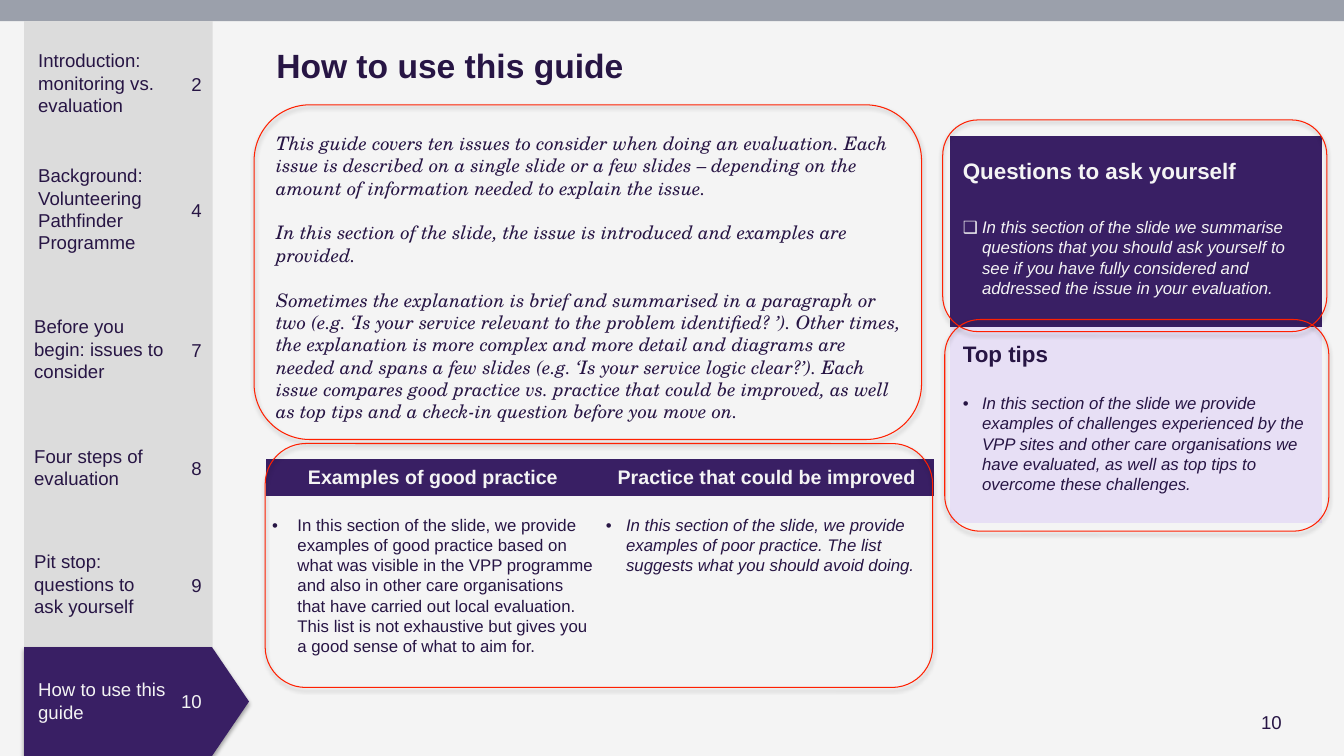
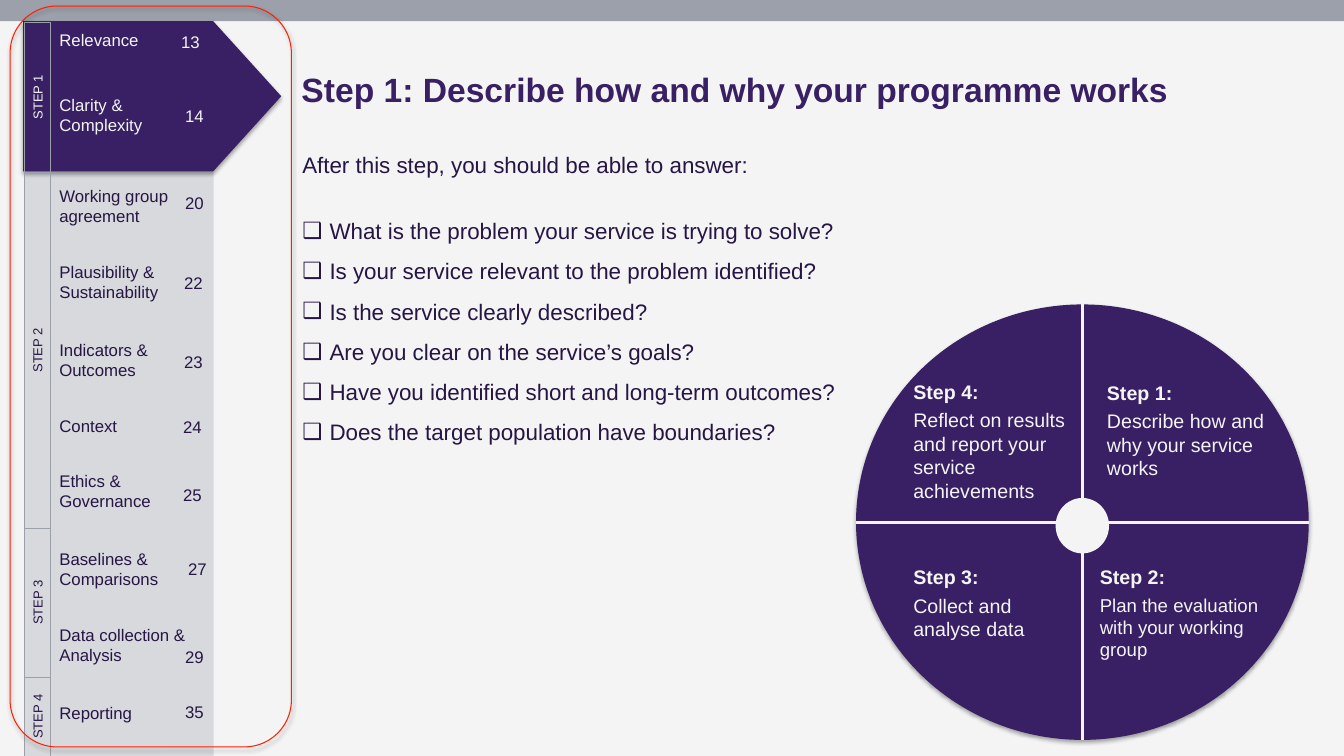
from lxml import etree
from pptx import Presentation
from pptx.dml.color import RGBColor
from pptx.enum.shapes import MSO_CONNECTOR, MSO_SHAPE
from pptx.enum.text import MSO_ANCHOR, MSO_AUTO_SIZE, PP_ALIGN
from pptx.oxml.ns import qn
from pptx.util import Inches, Pt

RECTANGLE = MSO_SHAPE.RECTANGLE
ROUNDED = MSO_SHAPE.ROUNDED_RECTANGLE
PENTAGON = MSO_SHAPE.PENTAGON
OVAL = MSO_SHAPE.OVAL
STRAIGHT = MSO_CONNECTOR.STRAIGHT
TOP, MIDDLE = MSO_ANCHOR.TOP, MSO_ANCHOR.MIDDLE
LEFT, CENTER, RIGHT = PP_ALIGN.LEFT, PP_ALIGN.CENTER, PP_ALIGN.RIGHT

COLORS = {
    "paper": "F4F4F4",
    "band": "9BA0AB",
    "ink": "271544",
    "purple": "391F64",
    "lilac": "E7DFF5",
    "guide_bar": "DCDCDC",
    "step_bar": "D7D9DD",
    "frame": "FF2001",
}
SANS, SERIF = "Arial", "TeX Gyre Schola"
CHECKBOX, DOT = "❑", "•"
TITLE_ONLY = 5
PLAIN_TABLE_STYLE = "{2D5ABB26-0587-4C30-8999-92F81FD0307C}"
LABEL_WIDTH, PAGE_WIDTH = 1.49, 0.5

# label, page, left, top, height
GUIDE_ENTRIES = [
    ("Introduction: monitoring vs. evaluation", "2", 0.28, 0.44, 0.77),
    ("Background: Volunteering Pathfinder Programme", "4", 0.28, 1.58, 1),
    ("Before you begin: issues to consider", "7", 0.24, 3.08, 0.77),
    ("Four steps of evaluation", "8", 0.24, 4.36, 0.55),
    ("Pit stop: questions to ask yourself", "9", 0.24, 5.41, 0.77),
    ("How to use this guide", "10", 0.28, 6.68, 0.55),
]
# label, page, top, height, top of page number, right edge of page number
STEP_ENTRIES = [
    ("Relevance", "13", 0.25, 0.3, 0.27, 2.08),
    ("Clarity & Complexity", "14", 0.89, 0.5, 1, 2.12),
    ("Working group agreement", "20", 1.79, 0.5, 1.86, 2.12),
    ("Plausibility & Sustainability", "22", 2.55, 0.5, 2.66, 2.11),
    ("Indicators & Outcomes", "23", 3.32, 0.5, 3.44, 2.11),
    ("Context", "24", 4.08, 0.3, 4.09, 2.1),
    ("Ethics & Governance", "25", 4.62, 0.5, 4.76, 2.1),
    ("Baselines & Comparisons", "27", 5.39, 0.5, 5.49, 2.15),
    ("Data collection & Analysis", "29", 6.15, 0.5, 6.37, 2.12),
    ("Reporting", "35", 6.92, 0.3, 6.91, 2.12),
]
STEP_EDGES = [0.22, 1.71, 5.24, 6.72, 7.5]
# heading, description, left, top, width, description size
WHEEL_STEPS = [
    ("Step 1:", "Describe how and why your service works", 10.88, 3.73, 1.82, 14),
    ("Step 2:", "Plan the evaluation with your working group", 10.81, 5.56, 2.04, 13.3),
    ("Step 3:", "Collect and analyse data", 8.96, 5.56, 1.47, 14),
    ("Step 4:", "Reflect on results and report your service achievements",
     8.96, 3.72, 1.82, 14),
]
INTRODUCTION = [
    "This guide covers ten issues to consider when doing an evaluation. Each issue is "
    "described on a single slide or a few slides – depending on the amount of information "
    "needed to explain the issue.",
    "In this section of the slide, the issue is introduced and examples are provided.",
    "Sometimes the explanation is brief and summarised in a paragraph or two (e.g. ‘Is your "
    "service relevant to the problem identified? ’). Other times, the explanation is more "
    "complex and more detail and diagrams are needed and spans a few slides (e.g. ‘Is your "
    "service logic clear?’). Each issue compares good practice vs. practice that could be "
    "improved, as well as top tips and a check-in question before you move on.",
]
GOOD_PRACTICE = (
    "In this section of the slide, we provide examples of good practice based on what was "
    "visible in the VPP programme and also in other care organisations that have carried out "
    "local evaluation. This list is not exhaustive but gives you a good sense of what to aim for."
)
POOR_PRACTICE = (
    "In this section of the slide, we provide examples of poor practice. The list suggests "
    "what you should avoid doing."
)
QUESTIONS = (
    "In this section of the slide we summarise questions that you should ask yourself to see "
    "if you have fully considered and addressed the issue in your evaluation."
)
TIPS = (
    "In this section of the slide we provide examples of challenges experienced by the VPP "
    "sites and other care organisations we have evaluated, as well as top tips to overcome "
    "these challenges."
)
STEP_QUESTIONS = [
    "What is the problem your service is trying to solve?",
    "Is your service relevant to the problem identified?",
    "Is the service clearly described?",
    "Are you clear on the service’s goals?",
    "Have you identified short and long-term outcomes?",
    "Does the target population have boundaries?",
]


def rgb(name):
    return RGBColor.from_string(COLORS[name])


def box(left, top, width, height):
    return [Inches(value) for value in (left, top, width, height)]


def write(paragraph, text, size=12, color="ink", font=SANS, bold=False, italic=False,
          align=LEFT, spacing=None, after=None, bullet=None, indent=0.2):
    """Fill one paragraph with formatted text."""
    paragraph.alignment = align
    if spacing:
        paragraph.line_spacing = spacing
    if after:
        paragraph.space_after = Pt(after)
    if bullet:
        properties = paragraph._p.get_or_add_pPr()
        properties.set("marL", str(Inches(indent)))
        properties.set("indent", str(-Inches(indent)))
        etree.SubElement(properties, qn("a:buFont")).set("typeface", SANS)
        etree.SubElement(properties, qn("a:buChar")).set("char", bullet)
    run = paragraph.add_run()
    run.text = text
    run.font.name = font
    run.font.size = Pt(size)
    run.font.bold = bold
    run.font.italic = italic
    run.font.color.rgb = rgb(color)


def add_text(slide, text, left, top, width, height, **text_format):
    frame = slide.shapes.add_textbox(*box(left, top, width, height)).text_frame
    frame.word_wrap = True
    write(frame.paragraphs[0], text, **text_format)
    return frame


def add_shape(slide, kind, left, top, width, height, fill=None, line=None,
              line_width=0.75, shadow=False):
    shape = slide.shapes.add_shape(kind, *box(left, top, width, height))
    shape.shadow.inherit = False
    if fill:
        shape.fill.solid()
        shape.fill.fore_color.rgb = rgb(fill)
    else:
        shape.fill.background()
    if line:
        shape.line.color.rgb = rgb(line)
        shape.line.width = Pt(line_width)
    else:
        shape.line.fill.background()
    if shadow:
        effects = shape.element.spPr.find(qn("a:effectLst"))
        outer = etree.SubElement(effects, qn("a:outerShdw"), blurRad="40000", dist="23000",
                                 dir="5400000", rotWithShape="0")
        black = etree.SubElement(outer, qn("a:srgbClr"), val="000000")
        etree.SubElement(black, qn("a:alpha"), val="35000")
    return shape


def add_frame(slide, left, top, width, height):
    add_shape(slide, ROUNDED, left, top, width, height, line="frame", shadow=True)


def add_arrow_tab(slide, left, top, width, height, point):
    tab = add_shape(slide, PENTAGON, left, top, width, height, "purple", shadow=True)
    tab.adjustments[0] = point


def add_line(slide, x1, y1, x2, y2):
    line = slide.shapes.add_connector(STRAIGHT, *box(x1, y1, x2, y2))
    line.line.color.rgb = rgb("paper")
    line.line.width = Pt(2)
    etree.SubElement(line.element.spPr, qn("a:effectLst"))


def add_plain_table(slide, left, top, widths, heights):
    """Add a table without style, borders or banding."""
    graphic = slide.shapes.add_table(
        len(heights), len(widths), *box(left, top, sum(widths), sum(heights)))
    graphic.element.xpath(".//a:tableStyleId")[0].text = PLAIN_TABLE_STYLE
    table = graphic.table
    table.first_row = table.horz_banding = False
    for column, width in zip(table.columns, widths):
        column.width = Inches(width)
    for row, height in zip(table.rows, heights):
        row.height = Inches(height)
    return table


def fill_cell(cell, text, fill, margins, anchor=MIDDLE, **text_format):
    (cell.margin_left, cell.margin_top,
     cell.margin_right, cell.margin_bottom) = box(*margins)
    cell.vertical_anchor = anchor
    if fill:
        cell.fill.solid()
        cell.fill.fore_color.rgb = rgb(fill)
    else:
        cell.fill.background()
    write(cell.text_frame.paragraphs[0], text, **text_format)


def add_entry(slide, label, page, left, top, height, page_top, page_right, **text_format):
    """Add one sidebar label with its page number."""
    add_text(slide, label, left, top, LABEL_WIDTH, height, **text_format)
    add_text(slide, page, page_right - PAGE_WIDTH, page_top, PAGE_WIDTH, 0.33,
             align=RIGHT, **text_format)


def add_master_band(presentation, slide):
    """Draw the top band and move it to the master, so every slide shows it."""
    band = add_shape(slide, RECTANGLE, 0, 0, 13.33, 0.21, "band").element
    band.xpath(".//p:cNvPr")[0].set("id", "20")
    presentation.slide_master.shapes.element.append(band)


def add_titled_slide(presentation, text, left, top, width, color):
    slide = presentation.slides.add_slide(presentation.slide_layouts[TITLE_ONLY])
    title = slide.shapes.title
    title.left, title.top, title.width, title.height = box(left, top, width, 0.6)
    frame = title.text_frame
    frame.word_wrap = True
    frame.auto_size = MSO_AUTO_SIZE.NONE
    frame.vertical_anchor = TOP
    write(frame.paragraphs[0], text, size=24, bold=True, color=color)
    return slide


def add_practice_table(slide):
    table = add_plain_table(slide, 2.64, 4.55, [3.31, 3.31], [0.37, 2.27])
    columns = [("Examples of good practice", GOOD_PRACTICE, 0.25, False),
               ("Practice that could be improved", POOR_PRACTICE, 0.2, True)]
    for index, (heading, body, indent, italic) in enumerate(columns):
        fill_cell(table.cell(0, index), heading, "purple", (0.06, 0, 0.06, 0), size=14,
                  color="paper", bold=True, align=CENTER, spacing=1.07)
        fill_cell(table.cell(1, index), body, None, (0.06, 0.19, 0.06, 0), anchor=TOP,
                  italic=italic, spacing=1.07, bullet=DOT, indent=indent)


def add_advice_table(slide):
    table = add_plain_table(slide, 9.42, 1.35, [3.69], [0.7, 1.19, 0.55, 1.4])
    sections = [("Questions to ask yourself", QUESTIONS, CHECKBOX, "purple", "paper"),
                ("Top tips", TIPS, DOT, "lilac", "ink")]
    for index, (heading, body, bullet, fill, color) in enumerate(sections):
        fill_cell(table.cell(2 * index, 0), heading, fill, (0.13, 0.07, 0.13, 0.07),
                  size=16, bold=True, color=color)
        fill_cell(table.cell(2 * index + 1, 0), body, fill, (0.13, 0.07, 0.13, 0.25),
                  italic=True, color=color, spacing=1.07, bullet=bullet, indent=0.19)


def add_wheel(slide):
    left, top, width, height = 8.49, 3.02, 4.49, 4.32
    center_x, center_y = left + width / 2, top + height / 2
    add_shape(slide, OVAL, left, top, width, height, "purple", shadow=True)
    add_line(slide, center_x, top, center_x, top + height)
    add_line(slide, left, center_y, left + width, center_y)
    for heading, description, x, y, text_width, size in WHEEL_STEPS:
        add_text(slide, heading, x, y, text_width, 0.34, size=14, bold=True, color="paper")
        add_text(slide, description, x, y + 0.28, text_width, 0.8, size=size, color="paper")
    add_shape(slide, OVAL, 10.47, 4.94, 0.53, 0.55, "paper")


def build_guide_slide(presentation):
    slide = add_titled_slide(presentation, "How to use this guide", 2.64, 0.4, 6.62, "ink")
    add_master_band(presentation, slide)
    add_practice_table(slide)
    style = {"size": 13.3, "font": SERIF, "italic": True, "after": 16}
    frame = add_text(slide, INTRODUCTION[0], 2.64, 1.26, 6.41, 3.02, **style)
    for text in INTRODUCTION[1:]:
        write(frame.add_paragraph(), text, **style)
    add_advice_table(slide)

    add_shape(slide, RECTANGLE, 0.24, 0.21, 1.87, 7.29, "guide_bar")
    add_arrow_tab(slide, 0.24, 6.42, 2.23, 1.08, 0.34)
    for label, page, left, top, height in GUIDE_ENTRIES:
        color = "paper" if page == "10" else "ink"
        add_entry(slide, label, page, left, top, height, top + (height - 0.33) / 2 + 0.01,
                  2.1, size=13.3, color=color)
    add_text(slide, "10", 12.41, 7, 0.64, 0.33, size=13.3)

    add_frame(slide, 2.52, 1.04, 6.62, 3.32)
    add_frame(slide, 2.63, 4.4, 6.62, 2.42)
    add_frame(slide, 9.35, 1.19, 3.81, 2.1)
    add_frame(slide, 9.37, 3.17, 3.81, 2.1)


def build_step_slide(presentation):
    slide = add_titled_slide(presentation, "Step 1: Describe how and why your programme works",
                             2.89, 0.63, 9.02, "purple")
    frame = add_text(slide, "After this step, you should be able to answer:",
                     2.9, 1.45, 5.61, 3.33, size=16, after=18.4)
    for question in STEP_QUESTIONS:
        write(frame.add_paragraph(), question, size=16, spacing=1.5,
              bullet=CHECKBOX, indent=0.27)

    add_shape(slide, RECTANGLE, 0.25, 0.23, 1.87, 7.27, "step_bar")
    add_arrow_tab(slide, 0.23, 0.21, 2.56, 1.49, 0.453)
    for index, (label, page, top, height, page_top, page_right) in enumerate(STEP_ENTRIES):
        add_entry(slide, label, page, 0.49, top, height, page_top, page_right,
                  color="paper" if index < 2 else "ink")
    for number, (top, bottom) in enumerate(zip(STEP_EDGES, STEP_EDGES[1:]), start=1):
        length, thickness = bottom - top, 0.26
        strip = add_shape(slide, RECTANGLE, 0.37 - length / 2,
                          (top + bottom - thickness) / 2, length, thickness,
                          line="band", line_width=0.25)
        strip.rotation = 270
        strip.text_frame.vertical_anchor = MIDDLE
        write(strip.text_frame.paragraphs[0], f"STEP {number}", size=9.3, align=CENTER,
              color="paper" if number == 1 else "ink")
    add_wheel(slide)
    add_frame(slide, 0.1, 0.06, 2.79, 7.35)


def main():
    presentation = Presentation()
    presentation.slide_width, presentation.slide_height = Inches(13.33), Inches(7.5)
    background = presentation.slide_master.background.fill
    background.solid()
    background.fore_color.rgb = rgb("paper")
    build_guide_slide(presentation)
    build_step_slide(presentation)
    presentation.save("out.pptx")


if __name__ == "__main__":
    main()
